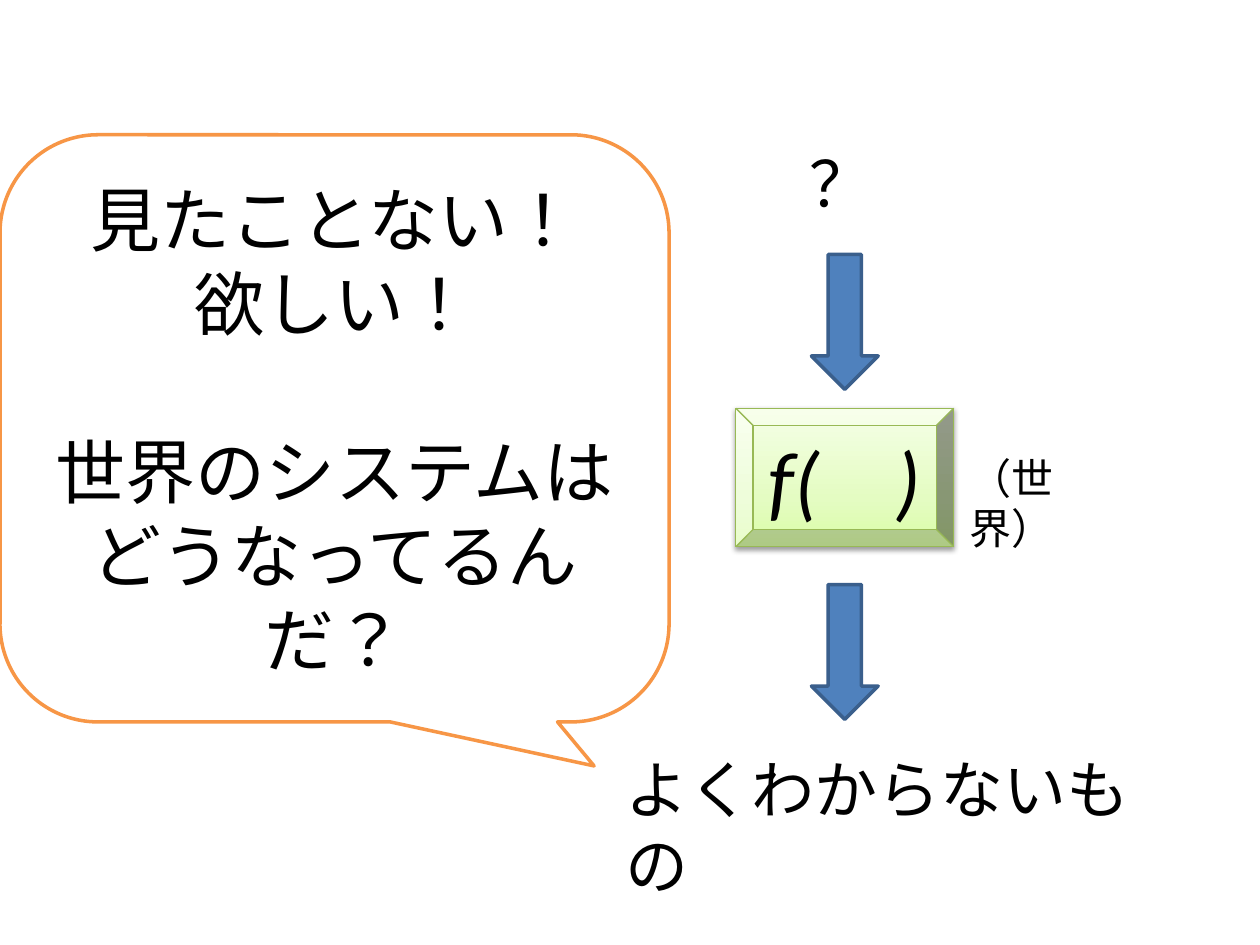
import copy

import pptx
import pptx.dml.color
import pptx.enum.lang
import pptx.enum.shapes
import pptx.enum.text
import pptx.oxml
import pptx.oxml.ns
import pptx.util
from pptx.util import Inches

FONT = "Calibri"
COLORS = {
    "text": "000000",
    "arrow": "4F81BD",
    "arrow_line": "3A5F8C",
    "box_line": "98B955",
    "bubble": "FFFFFF",
    "bubble_line": "F79646",
}
BOX_STOPS = [(0, "DAFDA7"), (35, "E4FCC2"), (100, "F5FFE7")]
KINDS = pptx.enum.shapes.MSO_SHAPE
BUBBLE_LINES = ["見たことない！", "欲しい！", "世界のシステムは", "どうなってるんだ？"]


def rgb(name):
    return pptx.dml.color.RGBColor.from_string(COLORS[name])


def format_text(shape, size, centered=False, italic=False, language=None):
    for para in shape.text_frame.paragraphs:
        if centered:
            para.alignment = pptx.enum.text.PP_ALIGN.CENTER
        for span in para.runs:
            span.font.name = FONT
            span.font.size = pptx.util.Pt(size)
            span.font.italic = italic or None
            span.font.language_id = language
            span.font.color.rgb = rgb("text")


def add_label(page, text, size, left, top, width, height):
    box = page.shapes.add_textbox(Inches(left), Inches(top), Inches(width), Inches(height))
    box.text_frame.word_wrap = True
    box.text_frame.text = text
    format_text(box, size)


def add_outlined(page, kind, left, top, width, height, line, weight, fill=None):
    shape = page.shapes.add_shape(
        kind, Inches(left), Inches(top), Inches(width), Inches(height))
    shape.shadow.inherit = False
    shape.line.color.rgb = rgb(line)
    shape.line.width = pptx.util.Pt(weight)
    shape.text_frame.vertical_anchor = pptx.enum.text.MSO_ANCHOR.MIDDLE
    if fill:
        shape.fill.solid()
        shape.fill.fore_color.rgb = rgb(fill)
    return shape


def add_down_arrow(page, top):
    add_outlined(page, KINDS.DOWN_ARROW, 6.44, top, 0.53, 1.07, "arrow_line", 2, "arrow")


def fill_upward_gradient(shape, stops):
    shape.fill.gradient()
    shape.fill.gradient_angle = 90
    stop_list = shape._element.spPr.find(".//" + pptx.oxml.ns.qn("a:gsLst"))
    stop_list.append(copy.deepcopy(stop_list[0]))
    for stop, (position, color) in zip(shape.fill.gradient_stops, stops):
        stop.position = position / 100
        stop.color.rgb = pptx.dml.color.RGBColor.from_string(color)


def add_soft_shadow(shape):
    effects = shape._element.spPr.find(pptx.oxml.ns.qn("a:effectLst"))
    effects.append(pptx.oxml.parse_xml(
        f'<a:outerShdw {pptx.oxml.ns.nsdecls("a")} blurRad="{pptx.util.Pt(3.1)}" '
        f'dist="{pptx.util.Pt(1.6)}" dir="5400000" rotWithShape="0">'
        '<a:srgbClr val="000000"><a:alpha val="38000"/></a:srgbClr></a:outerShdw>'))


def add_function_box(page):
    box = add_outlined(page, KINDS.BEVEL, 5.84, 3.24, 1.73, 1.1, "box_line", 0.75)
    fill_upward_gradient(box, BOX_STOPS)
    add_soft_shadow(box)
    box.text_frame.word_wrap = False
    para = box.text_frame.paragraphs[0]
    for piece in ["f(", " ", ")"]:
        para.add_run().text = piece
    format_text(box, 48, centered=True, italic=True)
    # Widen the open argument by character spacing, in hundredths of a point
    para.runs[1].font._element.set("spc", "3250")


def add_bubble(page):
    bubble = add_outlined(page, KINDS.ROUNDED_RECTANGULAR_CALLOUT,
                          0, 1.07, 5.31, 4.66, "bubble_line", 2, "bubble")
    for index, value in enumerate([0.388, 0.575, 0.167]):
        bubble.adjustments[index] = value
    bubble.text_frame.word_wrap = True
    bubble.text_frame.text = "\n".join(BUBBLE_LINES)
    format_text(bubble, 40, centered=True,
                language=pptx.enum.lang.MSO_LANGUAGE_ID.JAPANESE)
    # Gap of one line before the question
    bubble.text_frame.paragraphs[2].space_before = pptx.util.Pt(48)


def main():
    deck = pptx.Presentation()
    deck.slide_width, deck.slide_height = Inches(10), Inches(7.5)
    page = deck.slides.add_slide(deck.slide_layouts[6])

    # Flow: unknown input, function, unclear output
    add_label(page, "？", 36, 6.33, 1.1, 0.63, 0.71)
    add_down_arrow(page, 2.02)
    add_label(page, "（世界）", 24, 7.6, 3.54, 1.26, 0.5)
    add_function_box(page)
    add_down_arrow(page, 4.64)
    add_label(page, "よくわからないもの", 36, 4.87, 5.91, 4.2, 0.71)

    # Speech bubble
    add_bubble(page)

    deck.save("out.pptx")


if __name__ == "__main__":
    main()
